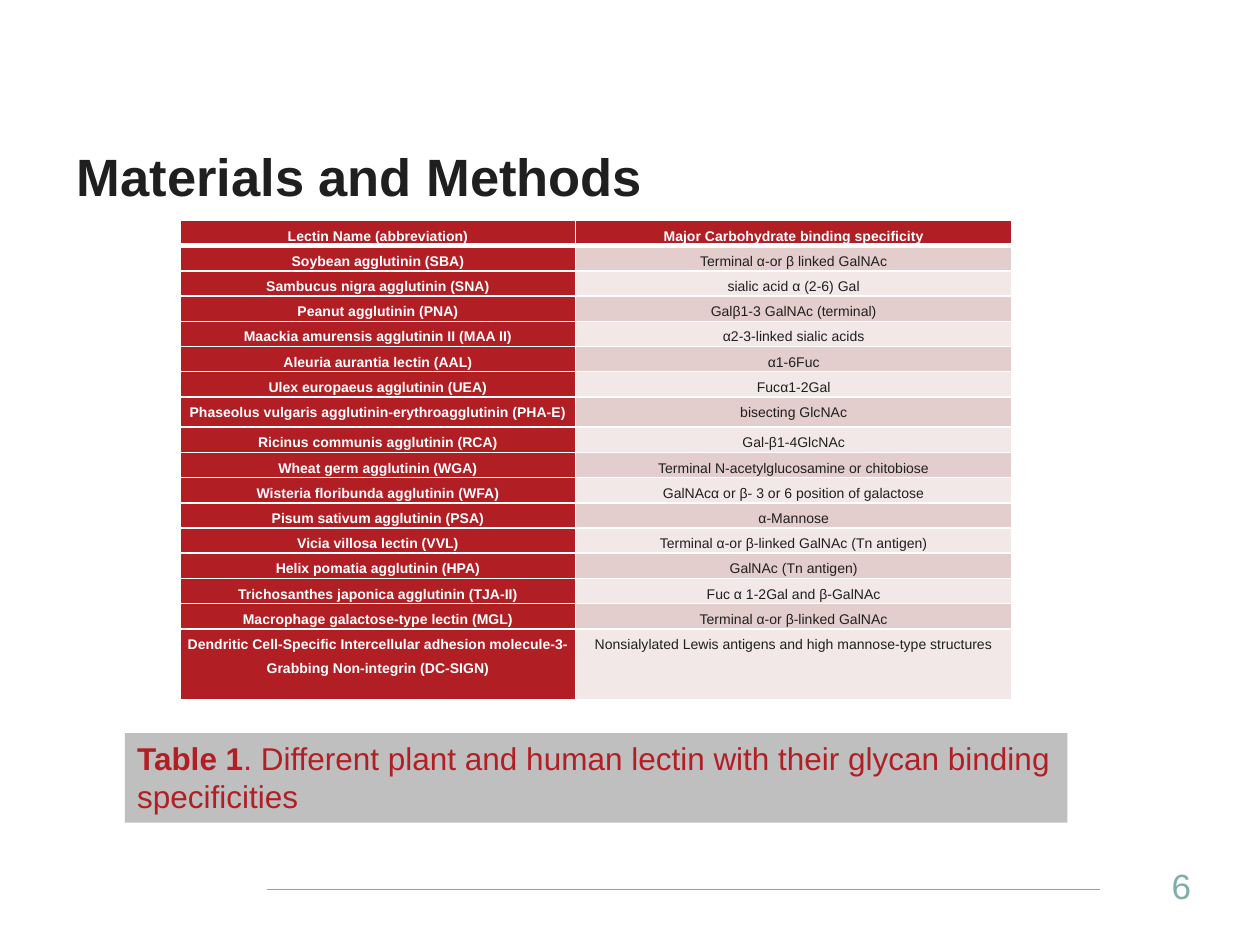
from lxml.etree import SubElement
from pptx import Presentation
from pptx.dml.color import RGBColor
from pptx.enum.shapes import MSO_CONNECTOR as Connector, MSO_SHAPE as Shape
from pptx.enum.text import MSO_ANCHOR as Anchor, MSO_AUTO_SIZE as AutoSize, PP_ALIGN as Align
from pptx.oxml.ns import qn
from pptx.util import Pt

RED = RGBColor(0xB1, 0x1F, 0x24)
INK = RGBColor(0x1F, 0x1F, 0x1F)
WHITE = RGBColor(0xFF, 0xFF, 0xFF)
GREY = RGBColor(0xBF, 0xBF, 0xBF)
TEAL = RGBColor(0x81, 0xAD, 0xA8)
BANDS = (RGBColor(0xF2, 0xE8, 0xE8), RGBColor(0xE4, 0xCD, 0xCD))

LECTINS = [
    ("Lectin Name (abbreviation)", "Major Carbohydrate binding specificity"),
    ("Soybean agglutinin (SBA)", "Terminal α-or β linked GalNAc"),
    ("Sambucus nigra agglutinin (SNA)", "sialic acid α (2-6) Gal"),
    ("Peanut agglutinin (PNA)", "Galβ1-3 GalNAc (terminal)"),
    ("Maackia amurensis agglutinin II (MAA II)", "α2-3-linked sialic acids"),
    ("Aleuria aurantia lectin (AAL)", "α1-6Fuc"),
    ("Ulex europaeus agglutinin (UEA)", "Fucα1-2Gal"),
    ("Phaseolus vulgaris agglutinin-erythroagglutinin (PHA-E)", "bisecting GlcNAc"),
    ("Ricinus communis agglutinin (RCA)", "Gal-β1-4GlcNAc"),
    ("Wheat germ agglutinin (WGA)", "Terminal N-acetylglucosamine or chitobiose"),
    ("Wisteria floribunda agglutinin (WFA)", "GalNAcα or β- 3 or 6 position of galactose"),
    ("Pisum sativum agglutinin (PSA)", "α-Mannose"),
    ("Vicia villosa lectin (VVL)", "Terminal α-or β-linked GalNAc (Tn antigen)"),
    ("Helix pomatia agglutinin (HPA)", "GalNAc (Tn antigen)"),
    ("Trichosanthes japonica agglutinin (TJA-II)", "Fuc α 1-2Gal and β-GalNAc"),
    ("Macrophage galactose-type lectin (MGL)", "Terminal α-or β-linked GalNAc"),
    ("Dendritic Cell-Specific Intercellular adhesion molecule-3-Grabbing Non-integrin (DC-SIGN)",
     "Nonsialylated Lewis antigens and high mannose-type structures"),
]
ROW_HEIGHT = 14.4
TALL_ROWS = {7: 17.3, 16: 40.3}


def write(frame, text, size, color, bold=False, align=Align.LEFT, spacing=None):
    paragraph = frame.paragraphs[0]
    paragraph.alignment = align
    if spacing:
        paragraph.line_spacing = spacing
    run = paragraph.add_run()
    run.text = text
    font = run.font
    font.name, font.size, font.bold = "Arial", Pt(size), bold
    font.color.rgb = color


def place(shape, box):
    shape.left, shape.top, shape.width, shape.height = map(Pt, box)


def add_title(slide, box):
    title = slide.shapes.title
    place(title, box)
    frame = title.text_frame
    frame.auto_size = AutoSize.NONE
    frame.vertical_anchor = Anchor.TOP
    write(frame, "Materials and Methods", 30, INK, bold=True)


def set_borders(cell, top=1, bottom=1):
    properties = cell._tc.get_or_add_tcPr()
    for side, width in (("L", 1), ("R", 1), ("T", top), ("B", bottom)):
        border = SubElement(properties, qn(f"a:ln{side}"), w=str(Pt(width)))
        fill = SubElement(border, qn("a:solidFill"))
        SubElement(fill, qn("a:srgbClr"), val=str(WHITE))


def add_lectin_table(slide, box):
    left, top, width, height = map(Pt, box)
    table = slide.shapes.add_table(len(LECTINS), 2, left, top, width, height).table
    name_width = Pt(226)
    table.columns[0].width = name_width
    table.columns[1].width = width - name_width
    for r, entry in enumerate(LECTINS):
        table.rows[r].height = Pt(TALL_ROWS.get(r, ROW_HEIGHT))
        for c, text in enumerate(entry):
            cell = table.cell(r, c)
            heading = r == 0 or c == 0
            set_borders(cell, top=3 if r == 1 else 1, bottom=3 if r == 0 else 1)
            cell.fill.solid()
            cell.fill.fore_color.rgb = RED if heading else BANDS[r % 2]
            cell.margin_left = cell.margin_right = Pt(3.6)
            cell.margin_top = cell.margin_bottom = 0
            write(cell.text_frame, text, 8, WHITE if heading else INK,
                  bold=heading, align=Align.CENTER, spacing=1.5)


def add_caption(slide, box):
    caption = slide.shapes.add_shape(Shape.RECTANGLE, *map(Pt, box))
    caption.shadow.inherit = False
    caption.fill.solid()
    caption.fill.fore_color.rgb = GREY
    caption.line.fill.background()
    frame = caption.text_frame
    frame.word_wrap = True
    frame.vertical_anchor = Anchor.TOP
    write(frame, "Table 1", 18, RED, bold=True)
    write(frame, ". Different plant and human lectin with their glycan binding specificities", 18, RED)


def add_footer(slide, box):
    left, top, width, height = box
    rule_y = Pt(top + height / 2 + 2)
    rule = slide.shapes.add_connector(
        Connector.STRAIGHT, Pt(left), rule_y, Pt(left + 476), rule_y)
    rule.line.color.rgb = TEAL
    rule.line.width = Pt(0.5)
    SubElement(rule._element.spPr, qn("a:effectLst"))
    number_width = 57.6
    number = slide.shapes.add_textbox(
        Pt(left + width - number_width), Pt(top), Pt(number_width), Pt(height))
    number.text_frame.word_wrap = True
    number.text_frame.vertical_anchor = Anchor.MIDDLE
    write(number.text_frame, "6", 20, TEAL)


def main():
    deck = Presentation()
    deck.slide_width, deck.slide_height = Pt(720), Pt(540)
    slide = deck.slides.add_slide(deck.slide_layouts[5])
    add_footer(slide, (152.6, 491.8, 567.4, 28.8))
    add_title(slide, (36.7, 78.5, 396, 43.9))
    add_caption(slide, (71.3, 419, 538.6, 51.1))
    add_lectin_table(slide, (103, 126, 475.2, 273.6))
    deck.save("out.pptx")


if __name__ == "__main__":
    main()
